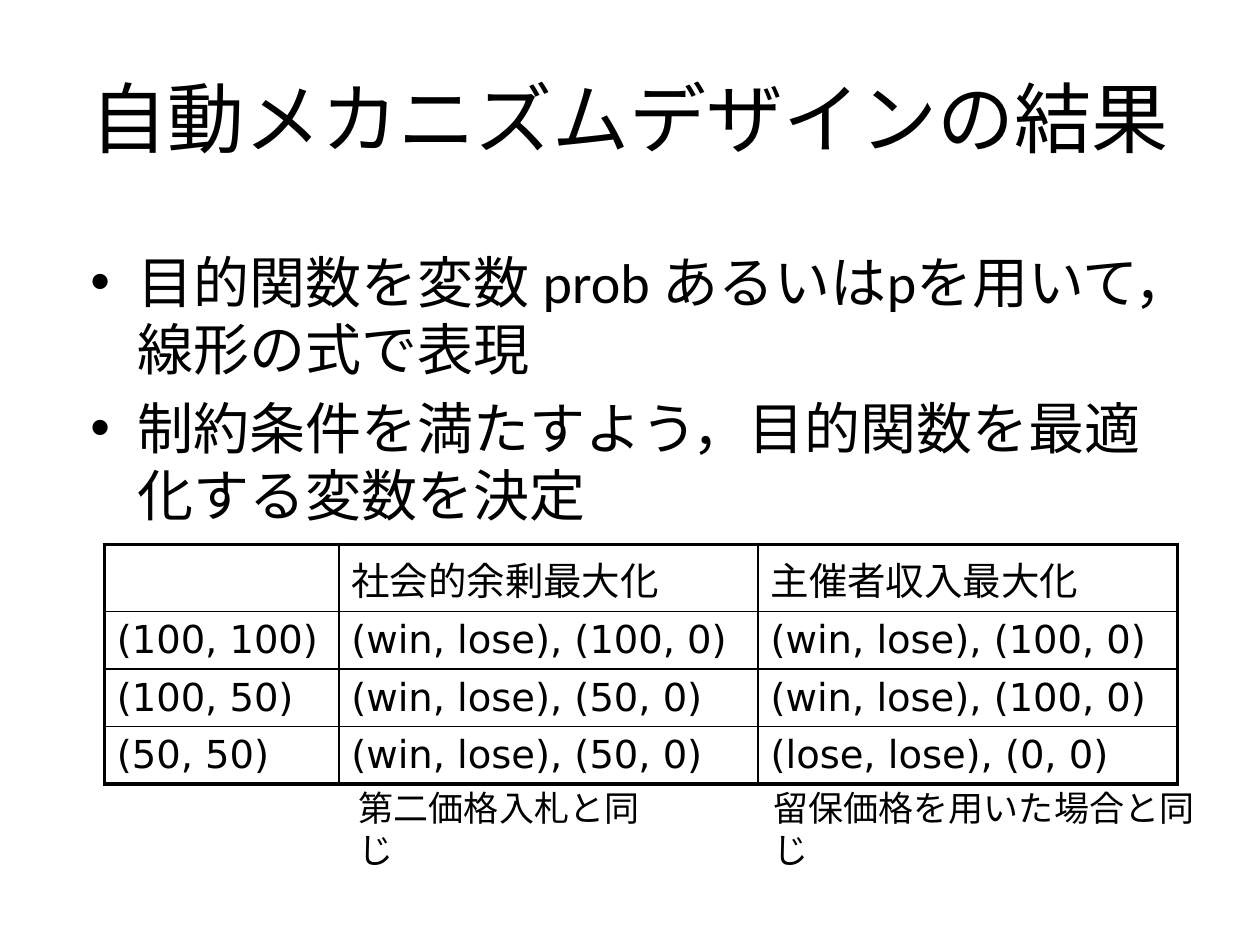
from lxml import etree
from pptx import Presentation
from pptx import util as u
from pptx.dml.color import RGBColor
from pptx.enum import lang, text
from pptx.oxml import ns

Pt = u.Pt
COLORS = {"ink": "000000", "paper": "FFFFFF"}


def write(paragraph, words, size, face):
    run = paragraph.add_run()
    run.text = words
    looks = {"size": Pt(size), "name": face,
             "language_id": lang.MSO_LANGUAGE_ID.JAPANESE}
    for key, value in looks.items():
        setattr(run.font, key, value)
    run.font.color.rgb = RGBColor.from_string(COLORS["ink"])


def add_frame(slide, left, top, width, height, **settings):
    box = slide.shapes.add_textbox(Pt(left), Pt(top), Pt(width), Pt(height))
    for key, value in {"word_wrap": True, **settings}.items():
        setattr(box.text_frame, key, value)
    return box.text_frame


deck = Presentation()
deck.slide_width, deck.slide_height = Pt(720), Pt(540)
slide = deck.slides.add_slide(deck.slide_layouts[6])
slide.background.fill.solid()
slide.background.fill.fore_color.rgb = RGBColor.from_string(COLORS["paper"])

# Title
title = add_frame(slide, 36, 21.6, 648, 90,
                  vertical_anchor=text.MSO_ANCHOR.MIDDLE).paragraphs[0]
title.alignment = text.PP_ALIGN.CENTER
write(title, "自動メカニズムデザインの結果", 44, "Calibri")

# Bulleted points
points = ["目的関数を変数 prob あるいはpを用いて，線形の式で表現",
          "制約条件を満たすよう，目的関数を最適化する変数を決定"]
body = add_frame(slide, 44.6, 138, 630, 160.5)
for i, point in enumerate(points):
    paragraph = body.add_paragraph() if i else body.paragraphs[0]
    paragraph.space_before = Pt(6.4)
    write(paragraph, point, 32, "Calibri")
    props = paragraph._p.get_or_add_pPr()
    props.set("marL", str(Pt(27)))
    props.set("indent", str(Pt(-27)))
    etree.SubElement(props, ns.qn("a:buFont"), typeface="Arial")
    etree.SubElement(props, ns.qn("a:buChar"), char="•")

# Results table
results = [
    ["", "社会的余剰最大化", "主催者収入最大化"],
    ["(100, 100)", "(win, lose), (100, 0)", "(win, lose), (100, 0)"],
    ["(100, 50)", "(win, lose), (50, 0)", "(win, lose), (100, 0)"],
    ["(50, 50)", "(win, lose), (50, 0)", "(lose, lose), (0, 0)"],
]
widths = [134, 239.6, 239.6]
heights = [38.4, 32.8, 32.8, 32.8]
table = slide.shapes.add_table(len(heights), len(widths), Pt(59.6), Pt(311.2),
                               Pt(sum(widths)), Pt(sum(heights))).table
table.first_row = table.horz_banding = False
for column, width in zip(table.columns, widths):
    column.width = Pt(width)
for row, height in zip(table.rows, heights):
    row.height = Pt(height)

for r, row in enumerate(results):
    for c, words in enumerate(row):
        cell = table.cell(r, c)
        cell.fill.background()
        # A slim bottom margin lets the rows keep their set height
        cell.margin_bottom = Pt(1.5)
        paragraph = cell.text_frame.paragraphs[0]
        paragraph.space_before = Pt(4.4)
        if words:
            write(paragraph, words, 22, "DejaVu Sans")
        # Thick outer frame, thin inner rules
        outer = {"lnL": c == 0, "lnR": c == len(widths) - 1,
                 "lnT": r == 0, "lnB": r == len(heights) - 1}
        cell_props = cell._tc.get_or_add_tcPr()
        for i, (side, is_outer) in enumerate(outer.items()):
            line = etree.Element(ns.qn(f"a:{side}"),
                                 w=str(Pt(2.25 if is_outer else 1)))
            fill = etree.SubElement(line, ns.qn("a:solidFill"))
            etree.SubElement(fill, ns.qn("a:srgbClr"), val=COLORS["ink"])
            cell_props.insert(i, line)

# Captions under the two mechanisms, clear of the table frame
captions = [(198, 185, "第二価格入札と同じ"),
            (435, 260, "留保価格を用いた場合と同じ")]
for left, width, words in captions:
    caption = add_frame(slide, left, 446, width, 31)
    write(caption.paragraphs[0], words, 20, "Arial")

deck.save("out.pptx")
